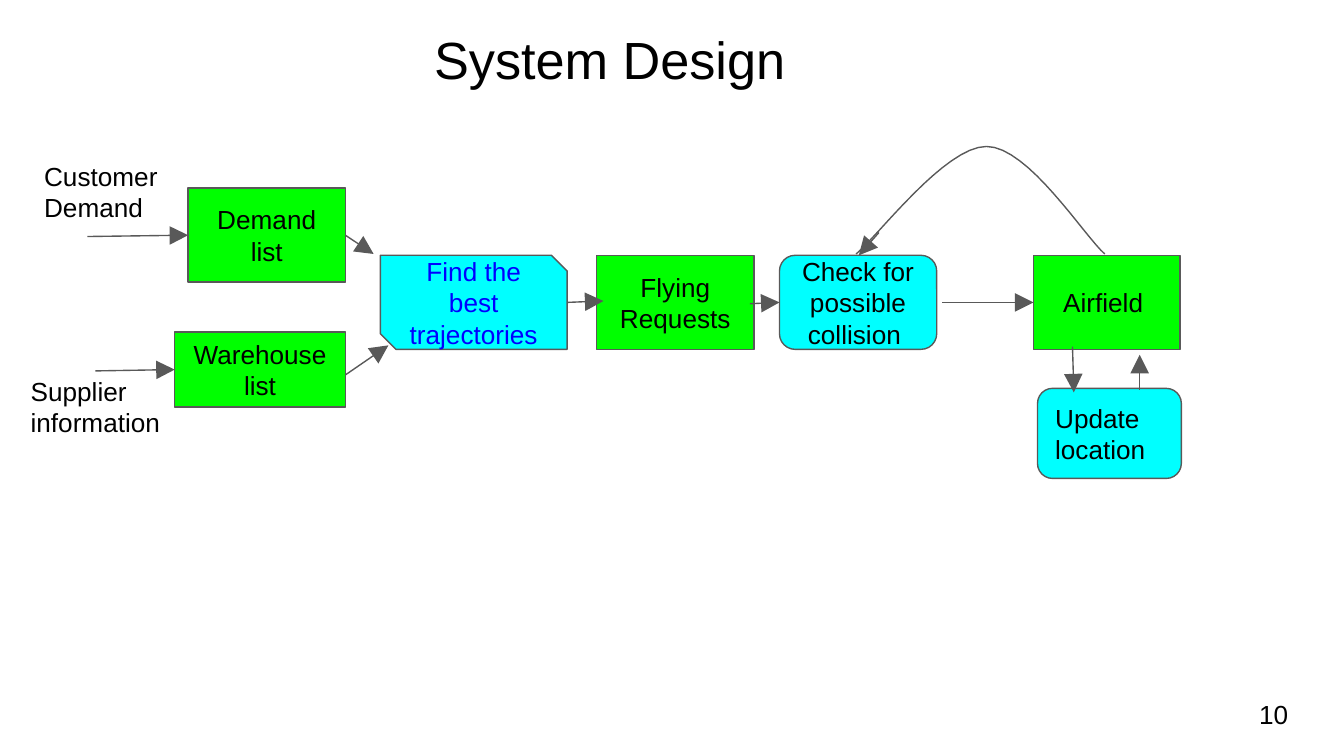
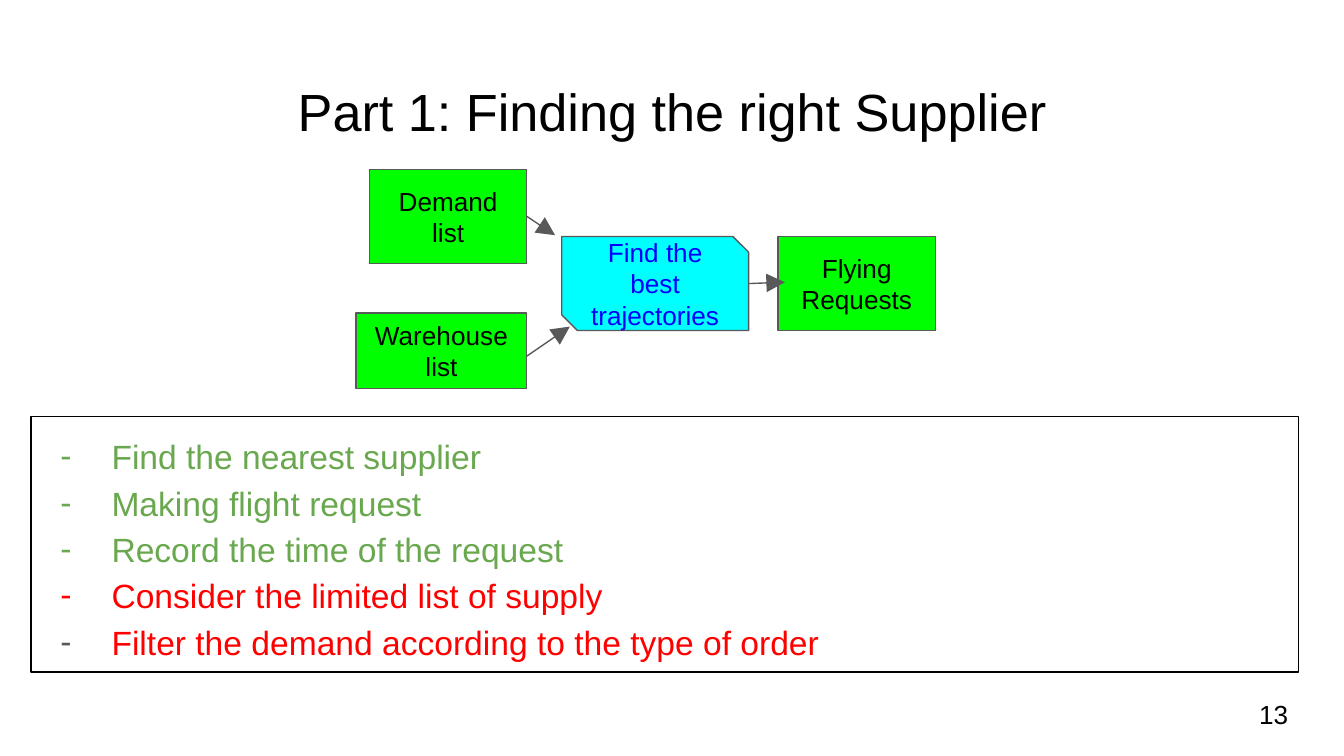
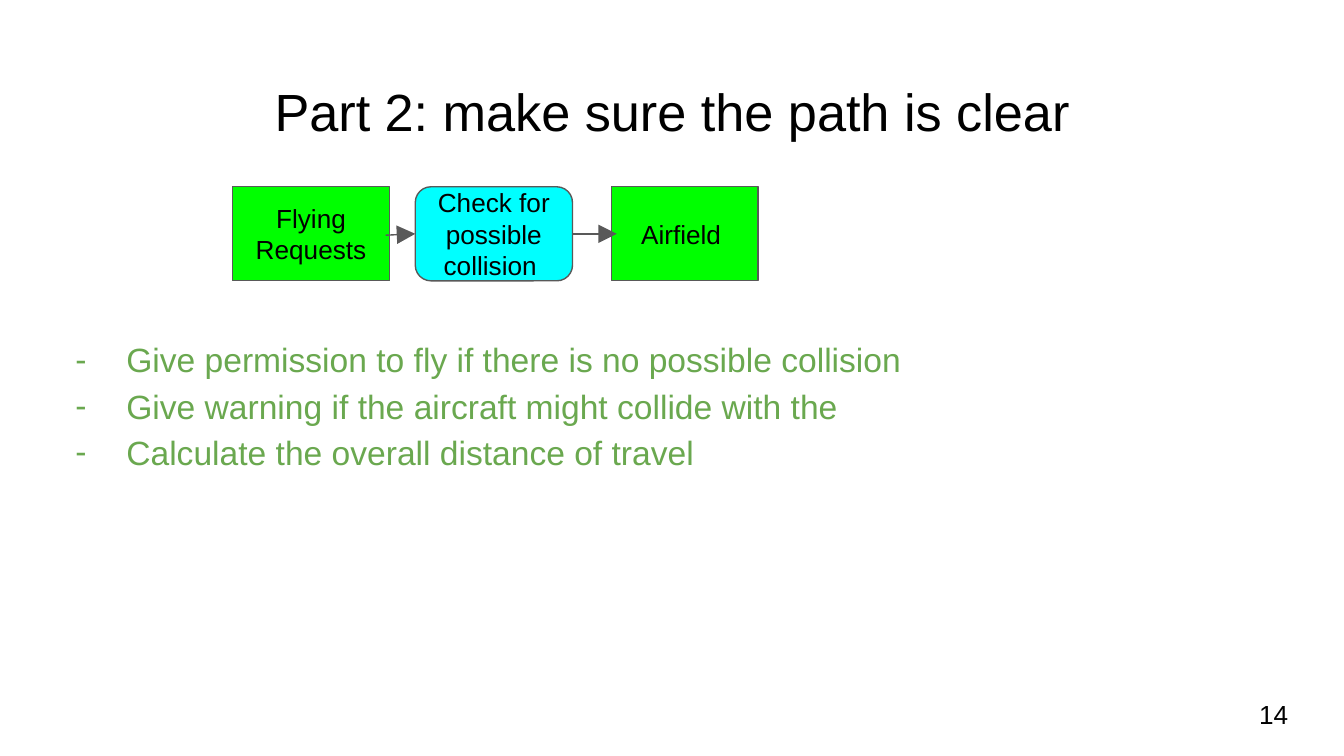
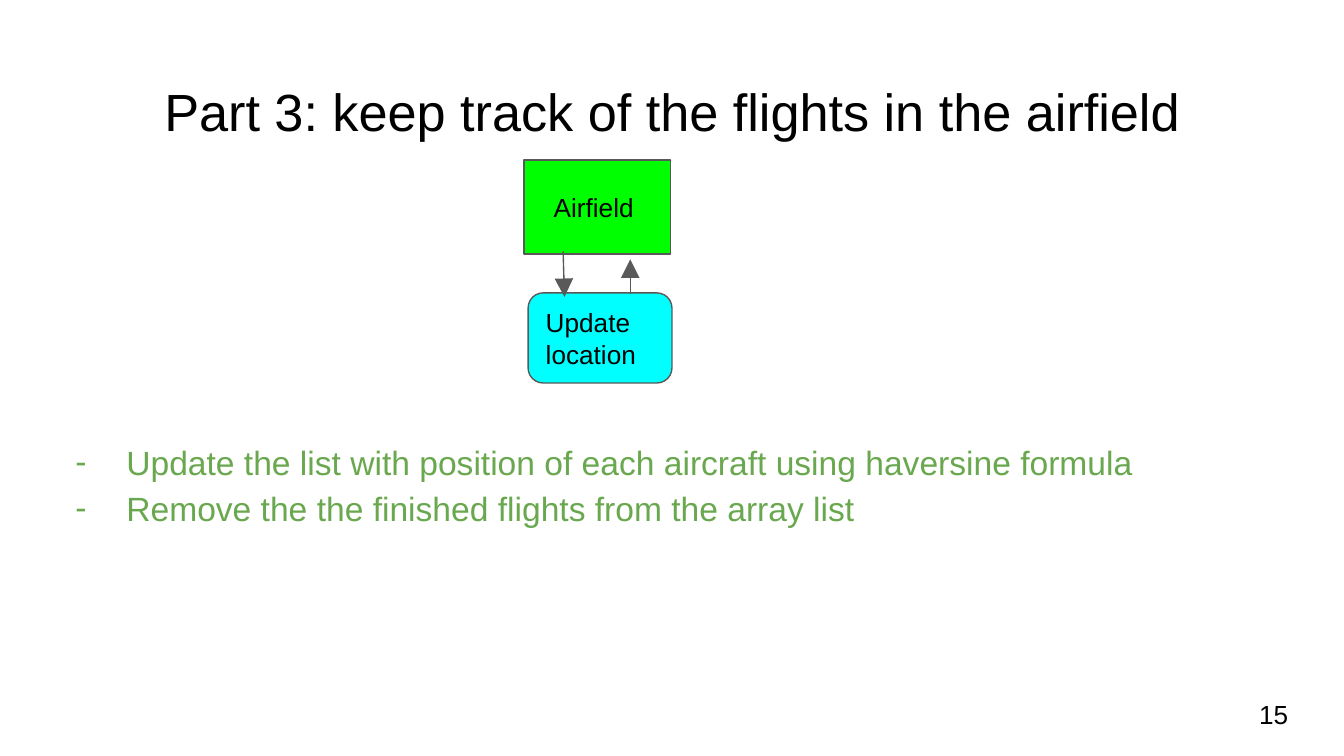
from lxml import etree
from pptx import Presentation
from pptx.dml.color import RGBColor
from pptx.enum.shapes import MSO_CONNECTOR, MSO_SHAPE
from pptx.enum.text import MSO_ANCHOR, MSO_AUTO_SIZE, PP_ALIGN
from pptx.oxml.ns import qn
from pptx.util import Emu, Pt

PX = 9144  # EMU in one px: 100 px to the inch
PAGE_WIDTH = 1000
TITLE_LAYOUT, LIST_LAYOUT = 5, 1

BLACK = RGBColor(0x00, 0x00, 0x00)
GREY = RGBColor(0x59, 0x59, 0x59)
GREEN = RGBColor(0x00, 0xFF, 0x00)
CYAN = RGBColor(0x00, 0xFF, 0xFF)
BLUE = RGBColor(0x00, 0x00, 0xFF)
RED = RGBColor(0xFF, 0x00, 0x00)
LEAF = RGBColor(0x6A, 0xA8, 0x4F)

FONT = "Arial"
TITLE_SIZE, LIST_SIZE, LABEL_SIZE = 28, 18, 14
LINE_WIDTH = Pt(0.75)
INSET = 10
BULLET_INDENT, BULLET_HANG = 50, 38

RECTANGLE = MSO_SHAPE.RECTANGLE
ROUNDED = MSO_SHAPE.ROUNDED_RECTANGLE
SNIPPED = MSO_SHAPE.SNIP_2_DIAG_RECTANGLE
STRAIGHT = MSO_CONNECTOR.STRAIGHT
LEFT, CENTER = PP_ALIGN.LEFT, PP_ALIGN.CENTER
TOP, MIDDLE = MSO_ANCHOR.TOP, MSO_ANCHOR.MIDDLE
NO_AUTOFIT = MSO_AUTO_SIZE.NONE
LEFT_SIDE, RIGHT_SIDE = 1, 3

NODE_HEIGHT = 70
PART_TITLE_BOX = (34, 49, 932, 63)
NUMBER_BOX = (927, 510, 60, 43)


def px(length):
    return Emu(round(length * PX))


def place(shape, box):
    shape.left, shape.top, shape.width, shape.height = map(px, box)


def prepare_frame(shape, anchor):
    frame = shape.text_frame
    frame.word_wrap = True
    frame.auto_size = NO_AUTOFIT
    frame.vertical_anchor = anchor
    frame.margin_left = frame.margin_right = px(INSET)
    frame.margin_top = frame.margin_bottom = px(INSET)
    return frame


def style_paragraph(para, size, color, align):
    para.alignment = align
    para.font.name = FONT
    para.font.size = Pt(size)
    para.font.color.rgb = color


def write(shape, text, size=LABEL_SIZE, color=BLACK, align=LEFT, anchor=TOP):
    frame = prepare_frame(shape, anchor)
    frame.text = text
    style_paragraph(frame.paragraphs[0], size, color, align)


def outline(shape, color=GREY):
    shape.line.color.rgb = color
    shape.line.width = LINE_WIDTH


def add_label(page, box, text, anchor=TOP):
    write(page.shapes.add_textbox(*map(px, box)), text, anchor=anchor)


def add_node(page, box, text, kind=RECTANGLE, fill=GREEN, color=BLACK, align=CENTER):
    node = page.shapes.add_shape(kind, *map(px, box))
    node.shadow.inherit = False
    node.fill.solid()
    node.fill.fore_color.rgb = fill
    outline(node)
    write(node, text, color=color, align=align, anchor=MIDDLE)
    return node


def add_arrow(page, start, end, leaves=None, enters=None):
    """Arrow between two points; joins the right side of leaves and the left side of enters."""
    arrow = page.shapes.add_connector(STRAIGHT, *map(px, start + end))
    if leaves is not None:
        arrow.begin_connect(leaves, RIGHT_SIDE)
    if enters is not None:
        arrow.end_connect(enters, LEFT_SIDE)
    outline(arrow)
    properties = arrow._element.spPr
    etree.SubElement(properties.find(qn("a:ln")), qn("a:tailEnd"),
                     type="triangle", w="lg", len="lg")
    etree.SubElement(properties, qn("a:effectLst"))


def bezier_points(controls, steps=16):
    """Points of a cubic curve after its start."""
    for step in range(1, steps + 1):
        t = step / steps
        weights = ((1 - t) ** 3, 3 * t * (1 - t) ** 2, 3 * t * t * (1 - t), t ** 3)
        yield tuple(
            px(sum(weight * point[axis] for weight, point in zip(weights, controls)))
            for axis in (0, 1)
        )


def add_title(page, box, text):
    place(page.shapes.title, box)
    write(page.shapes.title, text, TITLE_SIZE, align=CENTER)


def add_number(page, number):
    add_label(page, NUMBER_BOX, str(number), MIDDLE)


def add_dash(para, color):
    properties = para._p.get_or_add_pPr()
    properties.set("marL", str(px(BULLET_INDENT)))
    properties.set("indent", str(-px(BULLET_HANG)))
    bullet_color = etree.SubElement(properties, qn("a:buClr"))
    etree.SubElement(bullet_color, qn("a:srgbClr"), val=str(color))
    etree.SubElement(properties, qn("a:buFont"), typeface=FONT)
    etree.SubElement(properties, qn("a:buChar"), char="-")


def fill_list(page, box, items):
    """Fill the body with (text, text colour, dash colour) items."""
    body = page.placeholders[1]
    place(body, box)
    frame = prepare_frame(body, TOP)
    for index, (text, color, dash_color) in enumerate(items):
        para = frame.add_paragraph() if index else frame.paragraphs[0]
        para.text = text
        style_paragraph(para, LIST_SIZE, color, LEFT)
        para.line_spacing = 1.15
        para.space_before = Pt(0)
        add_dash(para, dash_color)
    return body


def add_flying_requests(page, left, top):
    return add_node(page, (left, top, 117, NODE_HEIGHT), "Flying Requests")


def add_airfield(page, left, top):
    return add_node(page, (left, top, 109, NODE_HEIGHT), "Airfield ")


def draw_supplier_stage(page, left, top):
    """From both lists to the flying requests; returns the two list nodes."""
    row = top + 50
    middle = row + NODE_HEIGHT // 2
    lists_right = left + 127
    demand = add_node(page, (left + 10, top, 117, NODE_HEIGHT), "Demand list")
    warehouse = add_node(page, (left, top + 107, 127, 56), "Warehouse list")
    add_node(page, (left + 153, row, 139, NODE_HEIGHT), "Find the best trajectories",
             SNIPPED, CYAN, BLUE)
    add_flying_requests(page, left + 314, row)
    add_arrow(page, (lists_right, top + 139), (left + 159, top + 117))
    add_arrow(page, (lists_right, top + 35), (left + 148, top + 49), leaves=demand)
    add_arrow(page, (left + 292, middle), (left + 319, middle - 1))
    return demand, warehouse


def draw_collision_check(page, flying_left, top):
    """Check node with its arrow from the flying requests."""
    left = flying_left + 136
    check = add_node(page, (left, top, 117, NODE_HEIGHT),
                     "Check for possible collision ", ROUNDED, CYAN)
    middle = top + NODE_HEIGHT // 2
    add_arrow(page, (left - 22, middle + 1), (left, middle), enters=check)
    return check


def draw_airfield_stage(page, left, top):
    """Airfield with the location update below it."""
    airfield = add_airfield(page, left, top)
    add_node(page, (left + 3, top + 99, 107, 67), "Update location", ROUNDED, CYAN, align=LEFT)
    add_arrow(page, (left + 29, top + 68), (left + 30, top + 102))
    add_arrow(page, (left + 79, top + 100), (left + 79, top + 74))
    return airfield


def draw_return_loop(page, left, top):
    """Curve from the airfield back to the collision check."""
    start, peak, end = (left + 185, top + 80), (left + 97, top), (left, top + 80)
    falling = (start, (left + 170, top + 67), (left + 128, top), peak)
    rising = (peak, (left + 66, top), (left + 16, top + 67), end)
    builder = page.shapes.build_freeform(*map(px, start), scale=1.0)
    builder.add_line_segments([*bezier_points(falling), *bezier_points(rising)], close=False)
    loop = builder.convert_to_shape()
    loop.shadow.inherit = False
    loop.fill.background()
    outline(loop)
    add_arrow(page, (left + 17, top + 64), (left + 2, top + 81))


def new_page(deck, layout):
    return deck.slides.add_slide(deck.slide_layouts[layout])


def build_system_design(deck):
    page = new_page(deck, TITLE_LAYOUT)
    add_title(page, (230, 10, 458, 41), "System Design ")
    demand, warehouse = draw_supplier_stage(page, 130, 140)
    draw_collision_check(page, 444, 190)
    airfield = draw_airfield_stage(page, 769, 190)
    draw_return_loop(page, 637, 109)
    add_arrow(page, (701, 225), (769, 225), enters=airfield)
    add_arrow(page, (65, 176), (140, 175), enters=demand)
    add_arrow(page, (71, 276), (130, 275), enters=warehouse)
    add_label(page, (23, 109, 117, 24), "Customer Demand")
    add_label(page, (13, 269, 117, 24), "Supplier information")
    add_number(page, 10)


def build_part(deck, title, list_box, items, number):
    page = new_page(deck, LIST_LAYOUT)
    add_title(page, PART_TITLE_BOX, title)
    body = fill_list(page, list_box, items)
    add_number(page, number)
    return page, body


def build_supplier_part(deck):
    page, body = build_part(
        deck, "Part 1: Finding the right Supplier", (23, 310, 943, 190),
        [
            ("Find the nearest supplier", LEAF, LEAF),
            ("Making flight request", LEAF, LEAF),
            ("Record the time of the request", LEAF, LEAF),
            ("Consider the limited list of supply", RED, RED),
            ("Filter the demand according to the type of order", RED, GREY),
        ], 13)
    outline(body, BLACK)
    draw_supplier_stage(page, 265, 126)


def build_collision_part(deck):
    page, _ = build_part(
        deck, "Part 2: make sure the path is clear", (34, 238, 932, 262),
        [
            ("Give permission to fly if there is no possible collision", LEAF, LEAF),
            ("Give warning if the aircraft might collide with the", LEAF, LEAF),
            ("Calculate the overall distance of travel", LEAF, LEAF),
        ], 14)
    left, top = 173, 139
    add_flying_requests(page, left, top)
    add_airfield(page, left + 282, top)
    check = draw_collision_check(page, left, top)
    middle = top + NODE_HEIGHT // 2
    add_arrow(page, (left + 253, middle), (left + 286, middle), leaves=check)


def build_tracking_part(deck):
    page, _ = build_part(
        deck, "Part 3: keep track of the flights in the airfield", (34, 314, 932, 186),
        [
            ("Update the list with position of each aircraft using haversine formula", LEAF, LEAF),
            ("Remove the the finished flights from the array list", LEAF, LEAF),
        ], 15)
    draw_airfield_stage(page, 390, 119)


def main():
    deck = Presentation()
    deck.slide_width = px(PAGE_WIDTH)
    deck.slide_height = deck.slide_width * 9 // 16
    build_system_design(deck)
    build_supplier_part(deck)
    build_collision_part(deck)
    build_tracking_part(deck)
    deck.save("out.pptx")


if __name__ == "__main__":
    main()
